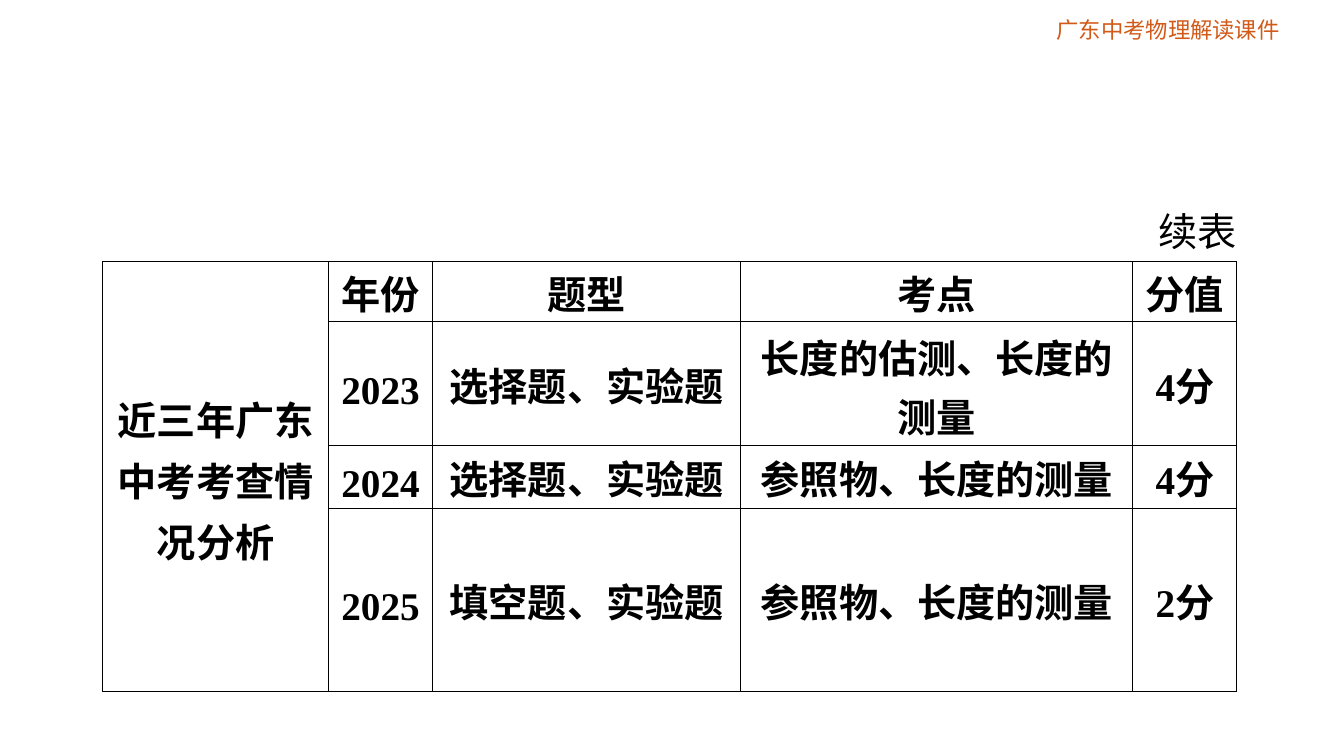
from dataclasses import dataclass

from lxml.etree import SubElement
from pptx import Presentation
from pptx.dml.color import RGBColor
from pptx.enum.lang import MSO_LANGUAGE_ID
from pptx.enum.text import MSO_ANCHOR, MSO_AUTO_SIZE, PP_ALIGN
from pptx.oxml.ns import qn
from pptx.util import Cm, Pt


@dataclass(frozen=True)
class Theme:
    font: str = "Times New Roman"
    ink: str = "000000"
    accent: str = "D25A18"
    header_size: int = 16
    body_size: int = 28
    rule_width: float = 0.75


theme = Theme()


def write(frame, text, size=theme.body_size, color=theme.ink, bold=False,
          align=PP_ALIGN.CENTER, pitches=(None,), tight_comma=False):
    for index, (line, pitch) in enumerate(zip(text.split("\n"), pitches)):
        para = frame.paragraphs[0] if index == 0 else frame.add_paragraph()
        para.alignment = align
        if pitch:
            para.line_spacing = Pt(pitch)
        before, comma, after = line.partition("、")
        for part in filter(None, (before, comma, after)):
            span = para.add_run()
            span.text = part
            span.font.name = theme.font
            span.font.size = Pt(size)
            span.font.bold = bold
            span.font.color.rgb = RGBColor.from_string(color)
            span.font.language_id = MSO_LANGUAGE_ID.SIMPLIFIED_CHINESE
            if tight_comma and part == "、":
                span.font._element.set("spc", "-100")


deck = Presentation()
deck.slide_width = Cm(33.87)
deck.slide_height = Cm(19.05)
page = deck.slides.add_slide(deck.slide_layouts[6])

labels = [
    ("广东中考物理解读课件", (25.45, 0.38, 7.98, 0.71), True, MSO_ANCHOR.MIDDLE,
     dict(size=theme.header_size, color=theme.accent)),
    ("续表", (29.18, 4.65, 1.98, 1.78), False, MSO_ANCHOR.TOP,
     dict(align=PP_ALIGN.RIGHT, pitches=(50,))),
]
for text, place, wrap, anchor, style in labels:
    box = page.shapes.add_textbox(*map(Cm, place))
    frame = box.text_frame
    frame.margin_left = frame.margin_right = frame.margin_top = frame.margin_bottom = 0
    frame.word_wrap = wrap
    frame.auto_size = MSO_AUTO_SIZE.NONE if wrap else MSO_AUTO_SIZE.SHAPE_TO_FIT_TEXT
    frame.vertical_anchor = anchor
    write(frame, text, **style)

rows = [
    ("近三年广东\n中考考查情\n况分析", "年份", "题型", "考点", "分值"),
    ("", "2023", "选择题、实验题", "长度的估测、长度的\n测量", "4分"),
    ("", "2024", "选择题、实验题", "参照物、长度的测量", "4分"),
    ("", "2025", "填空题、实验题", "参照物、长度的测量", "2分"),
]
column_widths = [5.69, 2.62, 7.77, 9.88, 2.62]
row_heights = [1.5, 3.12, 1.58, 1.58]
line_pitches = {1: (42,), 2: (44, 42), 3: (44, 44, 43)}

table = page.shapes.add_table(
    len(rows), len(column_widths), Cm(2.59), Cm(6.6),
    Cm(sum(column_widths)), Cm(sum(row_heights))).table
table.first_row = False
table.horz_banding = False
for column, width in zip(table.columns, column_widths):
    column.width = Cm(width)
for row, height in zip(table.rows, row_heights):
    row.height = Cm(height)
table.cell(0, 0).merge(table.cell(len(rows) - 1, 0))

for row, texts in zip(table.rows, rows):
    for cell, text in zip(row.cells, texts):
        cell.margin_left = cell.margin_right = Cm(0.2)
        cell.margin_top = cell.margin_bottom = 0
        cell.vertical_anchor = MSO_ANCHOR.MIDDLE
        properties = cell._tc.get_or_add_tcPr()
        for side in ("a:lnL", "a:lnR", "a:lnT", "a:lnB"):
            rule = SubElement(properties, qn(side), w=str(Pt(theme.rule_width)))
            fill = SubElement(rule, qn("a:solidFill"))
            SubElement(fill, qn("a:srgbClr"), val=theme.ink)
        cell.fill.background()
        if text:
            write(cell.text_frame, text, bold=True, tight_comma=True,
                  pitches=line_pitches[text.count("\n") + 1])

deck.save("out.pptx")
